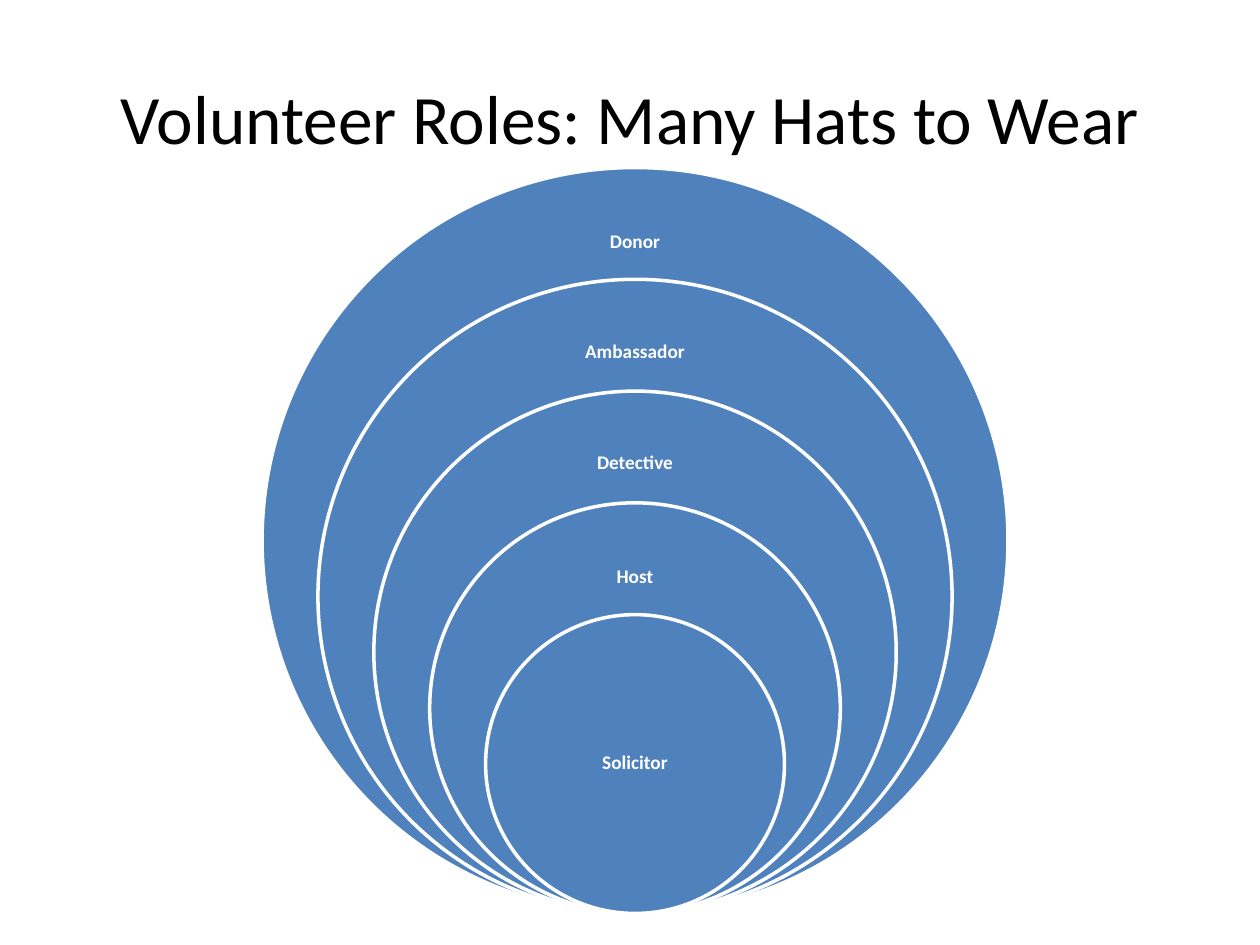
"""Build the volunteer roles slide: five nested circles sharing one lowest point."""
from pptx import Presentation
from pptx import util as u
from pptx.dml.color import RGBColor
from pptx.enum import shapes, text

BLACK = RGBColor(0x00, 0x00, 0x00)
WHITE = RGBColor(0xFF, 0xFF, 0xFF)
BLUE = RGBColor(0x4F, 0x81, 0xBD)

COLS, ROWS = 100, 75
CENTRE, BOTTOM = 50.4, 72.5
OUTER, STEP = 59.2, 8.87
ROLES = [
    ("Donor", 22.2, 5.9),
    ("Ambassador", 21.7, 5.8),
    ("Detective", 21.4, 5.7),
    ("Host", 17.6, 5.9),
    ("Solicitor", 16.7, 11.8),
]


class Deck:
    """Holds the style, the grid and the current slide."""

    font = "Calibri"

    def __init__(self):
        self.prs = Presentation()
        self.prs.slide_width, self.prs.slide_height = u.Inches(10), u.Inches(7.5)
        self.s = self.prs.slides.add_slide(self.prs.slide_layouts[5])
        self.rings = self.s.shapes.add_group_shape()

    def box(self, x, y, w, h):
        """Turn grid columns and rows into slide lengths."""
        col, row = self.prs.slide_width / COLS, self.prs.slide_height / ROWS
        return [u.Emu(round(v)) for v in (x * col, y * row, w * col, h * row)]

    def add_words(self, tf, words, size, color, bold=False):
        """Put one centred run into a text frame."""
        tf.word_wrap = True
        tf.auto_size = text.MSO_AUTO_SIZE.NONE
        tf.vertical_anchor = text.MSO_ANCHOR.MIDDLE
        p = tf.paragraphs[0]
        p.alignment = text.PP_ALIGN.CENTER
        r = p.add_run()
        r.text = words
        r.font.name, r.font.size, r.font.bold = self.font, u.Pt(size), bold
        r.font.color.rgb = color
        return p

    def title(self, words, x, y, w, h):
        """Place and fill the title placeholder."""
        sp = self.s.shapes.title
        sp.left, sp.top, sp.width, sp.height = self.box(x, y, w, h)
        self.add_words(sp.text_frame, words, 39.6, BLACK)

    def circle(self, x, y, d):
        """Draw a blue circle with a white outline."""
        sp = self.rings.shapes.add_shape(shapes.MSO_SHAPE.OVAL, *self.box(x, y, d, d))
        sp.shadow.inherit = False
        sp.fill.solid()
        sp.fill.fore_color.rgb = BLUE
        sp.line.color.rgb = WHITE
        sp.line.width = u.Pt(2)

    def label(self, words, x, y, w, h):
        """Add a bold white role name."""
        tf = self.rings.shapes.add_textbox(*self.box(x, y, w, h)).text_frame
        tf.margin_left = tf.margin_right = u.Inches(0.09)
        tf.margin_top = tf.margin_bottom = u.Inches(0.09)
        self.add_words(tf, words, 11, WHITE, bold=True).line_spacing = 0.9


def main():
    """Draw the title, then the circles from the largest to the smallest."""
    deck = Deck()
    deck.title("Volunteer Roles: Many Hats to Wear", 5, 3, 90, 12.5)
    for i, (role, w, h) in enumerate(ROLES):
        d = OUTER - i * STEP
        top = BOTTOM - d
        deck.circle(CENTRE - d / 2, top, d)
        deck.label(role, CENTRE - w / 2, top + h / 2, w, h)
    deck.prs.save("out.pptx")


if __name__ == "__main__":
    main()
